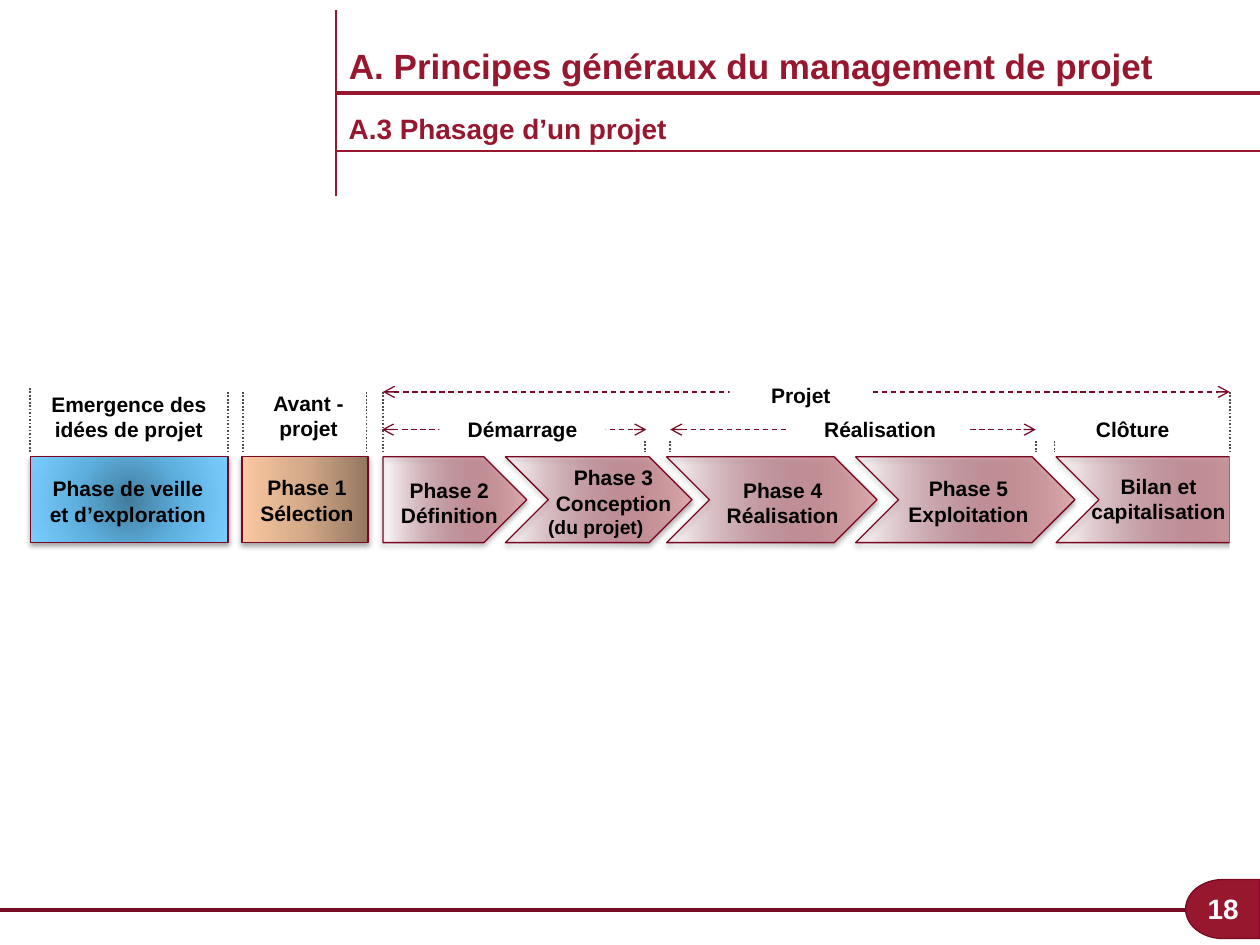
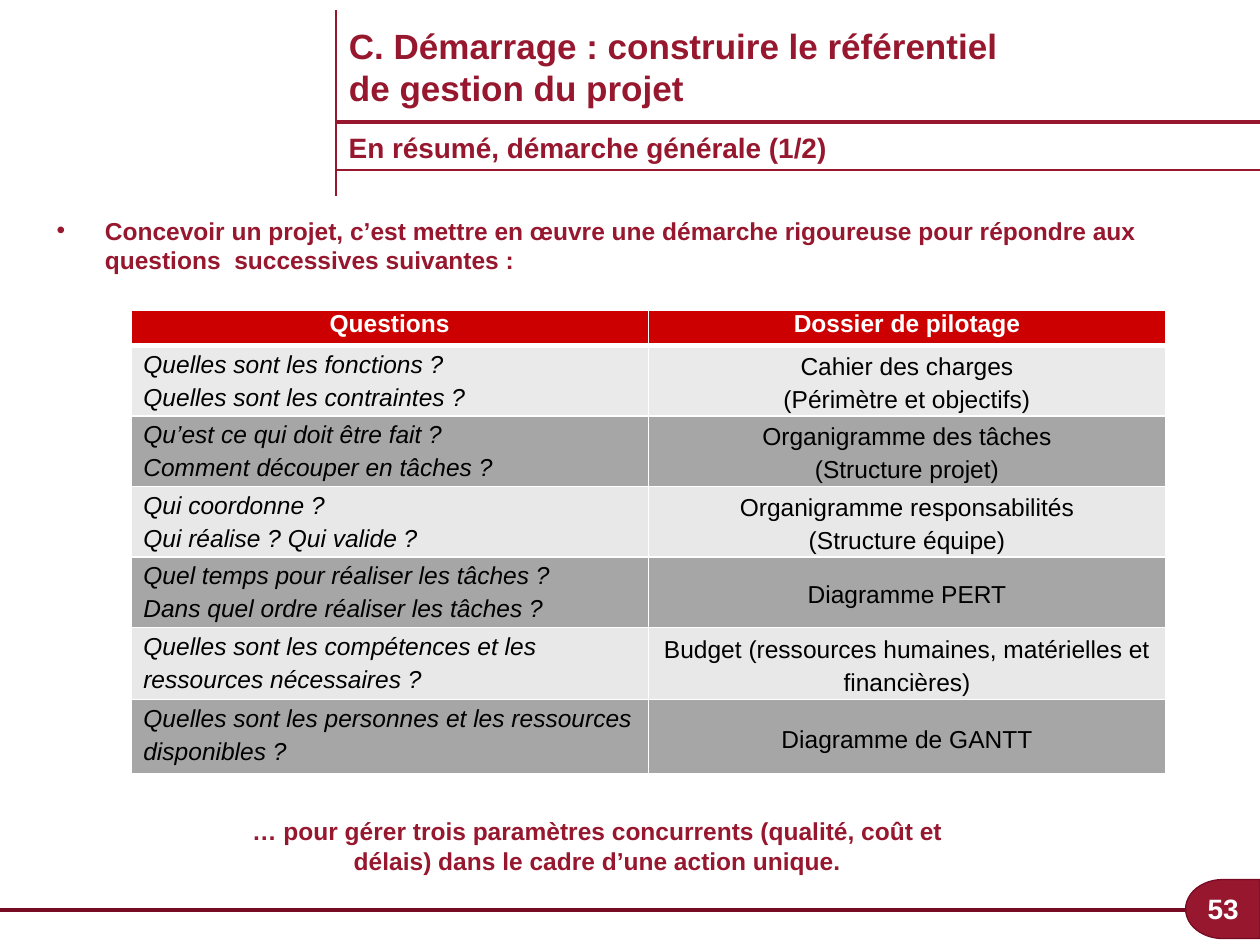
"""Build two slides on project phases and the project management file."""
import pptx
import pptx.dml.color
import pptx.enum.dml
import pptx.enum.shapes
import pptx.enum.text
import pptx.oxml
import pptx.oxml.ns
import pptx.util

Cm = pptx.util.Cm
Pt = pptx.util.Pt
Shapes = pptx.enum.shapes.MSO_SHAPE
Align = pptx.enum.text.PP_ALIGN
Anchor = pptx.enum.text.MSO_ANCHOR
Dash = pptx.enum.dml.MSO_LINE

CRIMSON, DARK, WINE = "96172E", "780B24", "780822"
BLACK, WHITE, GREY = "000000", "FFFFFF", "4D4D4D"
HEADER, LIGHT, MEDIUM = "CC0000", "E8E8E8", "A6A6A6"
LINEAR = '<a:lin ang="{}" scaled="0"/>'
CIRCLE = ('<a:path path="circle"><a:fillToRect l="50000" t="50000" '
          'r="50000" b="50000"/></a:path>')
ROSE = ([(0, "83001E", 0), (100, "DCACAE", 100)], LINEAR.format(0))
BLUE = ([(0, "427C9D", 100), (50, "5EB0DF", 100), (100, "7ACEFF", 100)], CIRCLE)
ORANGE = ([(0, "947760", 100), (50, "D3A988", 100), (100, "FAC8A1", 100)],
          LINEAR.format(10800000))
MARGIN = 6.78
SLIDE_WIDTH, SLIDE_HEIGHT = 25.4, 19.05


def color(value):
    return pptx.dml.color.RGBColor.from_string(value)


def xml(tag, content="", **attributes):
    listed = "".join(f' {name}="{value}"' for name, value in attributes.items())
    namespace = pptx.oxml.ns.nsdecls("a")
    return pptx.oxml.parse_xml(f"<a:{tag} {namespace}{listed}>{content}</a:{tag}>")


def solid(value):
    return f'<a:solidFill><a:srgbClr val="{value}"/></a:solidFill>'


class Deck:
    def __init__(self):
        self.presentation = pptx.Presentation()
        self.presentation.slide_width = Cm(SLIDE_WIDTH)
        self.presentation.slide_height = Cm(SLIDE_HEIGHT)
        self.slide = None

    def start(self, layout, number, title, title_box, rule, subtitle, subtitle_top, spacing=1.0):
        self.slide = self.presentation.slides.add_slide(
            self.presentation.slide_layouts[layout])
        self.line(0, 18.34, 23.9, 18.34, DARK, 2)
        tab = self.shape(Shapes.FLOWCHART_DELAY, 23.9, 17.73, 1.5, 1.19, CRIMSON, DARK)
        tab.rotation = 180
        self.text(number, 19.3, 17.81, 5.92, 1.02, 16, WHITE, Align.RIGHT,
                  anchor=Anchor.MIDDLE)
        self.line(MARGIN, rule, SLIDE_WIDTH, rule, CRIMSON, 2.25)
        self.placeholder(0, title, title_box, 20).line_spacing = spacing
        self.text(subtitle, MARGIN, subtitle_top, 18.31, 0.94, 16, CRIMSON, Align.LEFT)
        subtitle_rule = subtitle_top + 0.92
        self.line(MARGIN, subtitle_rule, SLIDE_WIDTH, subtitle_rule, CRIMSON, 1)
        self.line(MARGIN, 0.2, MARGIN, 3.96, CRIMSON, 1)

    def styled_run(self, paragraph, text, size, ink, bold=True, italic=False,
                   align=Align.LEFT):
        paragraph.alignment = align
        run = paragraph.add_run()
        run.text = text
        run.font.name = "Arial"
        run.font.size = Pt(size)
        run.font.bold = bold
        run.font.italic = italic
        run.font.color.rgb = color(ink)

    def placeholder(self, index, text, box, size, bullet=False):
        shape = self.slide.placeholders[index]
        shape.left, shape.top, shape.width, shape.height = map(Cm, box)
        frame = shape.text_frame
        frame.auto_size = pptx.enum.text.MSO_AUTO_SIZE.NONE
        frame.vertical_anchor = Anchor.TOP
        paragraph = frame.paragraphs[0]
        if bullet:
            properties = paragraph._p.get_or_add_pPr()
            properties.set("marL", str(Cm(0.97)))
            properties.set("indent", str(-Cm(0.97)))
            properties.append(xml("buFont", typeface="Arial"))
            properties.append(xml("buChar", char="•"))
        paragraph.space_before = Pt(0)
        self.styled_run(paragraph, text, size, CRIMSON)
        return paragraph

    def text(self, text, left, top, width, height, size=12, ink=BLACK,
             align=Align.CENTER, fill=None, anchor=Anchor.TOP, wrap=True):
        box = self.slide.shapes.add_textbox(Cm(left), Cm(top), Cm(width), Cm(height))
        if fill:
            box.fill.solid()
            box.fill.fore_color.rgb = color(fill)
        frame = box.text_frame
        frame.word_wrap = wrap
        frame.vertical_anchor = anchor
        self.styled_run(frame.paragraphs[0], text, size, ink, align=align)

    def shape(self, kind, left, top, width, height, fill, outline=None):
        shape = self.slide.shapes.add_shape(kind, Cm(left), Cm(top), Cm(width), Cm(height))
        shape.shadow.inherit = False
        shape.fill.solid()
        shape.fill.fore_color.rgb = color(fill)
        if outline:
            shape.line.color.rgb = color(outline)
            shape.line.width = Pt(0.75)
        else:
            shape.line.fill.background()
        return shape

    def phase(self, kind, left, width, gradient):
        shape = self.shape(kind, left, 9.21, width, 1.73, WHITE, WINE)
        stops, direction = gradient
        listed = "".join(
            f'<a:gs pos="{place * 1000}"><a:srgbClr val="{value}">'
            f'<a:alpha val="{opacity * 1000}"/></a:srgbClr></a:gs>'
            for place, value, opacity in stops)
        properties = shape.element.spPr
        properties.replace(properties.find(pptx.oxml.ns.qn("a:solidFill")),
                           xml("gradFill", f"<a:gsLst>{listed}</a:gsLst>{direction}"))
        properties.find(pptx.oxml.ns.qn("a:effectLst")).append(
            xml("outerShdw", '<a:srgbClr val="000000"><a:alpha val="35000"/></a:srgbClr>',
                blurRad=Pt(3.1), dist=Pt(1.8), dir=5400000, rotWithShape=0))

    def line(self, left, top, right, bottom, ink, width, dash=None, arrows=False):
        connector = self.slide.shapes.add_connector(
            pptx.enum.shapes.MSO_CONNECTOR.STRAIGHT, Cm(left), Cm(top), Cm(right), Cm(bottom))
        connector.line.color.rgb = color(ink)
        connector.line.width = Pt(width)
        if dash:
            connector.line.dash_style = dash
        properties = connector.element.spPr
        if arrows:
            outline = properties.find(pptx.oxml.ns.qn("a:ln"))
            for end in ("headEnd", "tailEnd"):
                outline.append(xml(end, type="arrow"))
        properties.append(xml("effectLst"))

    def cell(self, cell, lines, fill, ink, top, bottom, **style):
        properties = cell._tc.get_or_add_tcPr()
        for side, width in zip("LRTB", (1, 1, top, bottom)):
            properties.append(xml("ln" + side, solid(WHITE), w=Pt(width)))
        cell.fill.solid()
        cell.fill.fore_color.rgb = color(fill)
        cell.margin_left = cell.margin_right = Cm(0.25)
        cell.margin_top = cell.margin_bottom = 0
        frame = cell.text_frame
        for index, text in enumerate(lines):
            paragraph = frame.add_paragraph() if index else frame.paragraphs[0]
            if ink == BLACK:
                paragraph.line_spacing = 1.2
            self.styled_run(paragraph, text, 14, ink, **style)

    def table(self, left, top, column_width, heights, headings, rows):
        table = self.slide.shapes.add_table(
            len(heights), 2, Cm(left), Cm(top), Cm(2 * column_width), Cm(sum(heights))).table
        table.horz_banding = False
        for column in table.columns:
            column.width = Cm(column_width)
        for row, height in zip(table.rows, heights):
            row.height = Cm(height)
        for index, heading in enumerate(headings):
            self.cell(table.cell(0, index), [heading], HEADER, WHITE, 1, 3,
                      align=Align.CENTER)
        for index, (questions, documents) in enumerate(rows, 1):
            fill = MEDIUM if index % 2 == 0 else "EAEAEA" if index == 1 else LIGHT
            top_border = 3 if index == 1 else 1
            self.cell(table.cell(index, 0), questions, fill, BLACK, top_border, 1,
                      bold=False, italic=True)
            answer = table.cell(index, 1)
            self.cell(answer, documents, fill, BLACK, top_border, 1,
                      bold=False, align=Align.CENTER)
            answer.vertical_anchor = Anchor.MIDDLE


def phases_slide(deck):
    deck.start(5, "18", "A. Principes généraux du management de projet",
               (MARGIN, 0.94, 18.14, 0.94), 1.88, "A.3 Phasage d’un projet", 2.13, 0.8)

    deck.phase(Shapes.PENTAGON, 7.72, 2.9, ROSE)
    for left, width in ((10.19, 3.76), (13.44, 4.24), (17.25, 4.42), (21.29, 4.37)):
        deck.phase(Shapes.CHEVRON, left, width, ROSE)
    project_end = 24.79
    deck.line(project_end, 9.21, project_end, 10.94, DARK, 0.75)
    deck.shape(Shapes.RECTANGLE, project_end, 9.19, SLIDE_WIDTH - project_end, 1.91, WHITE)
    deck.phase(Shapes.RECTANGLE, 0.61, 3.99, BLUE)
    deck.phase(Shapes.RECTANGLE, 4.88, 2.54, ORANGE)

    for top, places in ((7.82, (0.61,)),
                        (7.9, (4.6, 4.9, 7.39, 7.72, project_end)),
                        (8.89, (13.0, 13.51, 20.88, 21.26))):
        for place in places:
            deck.line(place, top, place, 9.12, GREY, 1, Dash.ROUND_DOT)
    for left, right, level in ((7.72, project_end, 7.9), (7.7, 13.03, 8.66),
                               (13.51, 20.88, 8.66)):
        deck.line(left, level, right, level, DARK, 0.75, Dash.DASH, arrows=True)
    for name, left, top, width in (
            ("Projet", 14.71, 7.59, 2.87), ("Démarrage", 8.86, 8.28, 3.35),
            ("Réalisation", 15.93, 8.28, 3.63), ("Clôture", 21.77, 8.28, 2.13)):
        deck.text(name, left, top, width, 0.76, fill=WHITE)

    for name, left, top, width in (
            ("Emergence des idées de projet", 0.76, 7.77, 3.68),
            ("Avant - projet", 5.18, 7.75, 2.08),
            ("Phase de veille et d’exploration", 0.74, 9.47, 3.68),
            ("Phase 1 Sélection", 4.78, 9.45, 2.82),
            ("Phase 2 Définition", 7.65, 9.5, 2.82),
            ("Phase 3 Conception", 10.92, 9.25, 2.9),
            ("Phase 4 Réalisation", 14.33, 9.5, 2.9),
            ("Phase 5 Exploitation", 17.91, 9.47, 3.23),
            ("Bilan et capitalisation", 21.74, 9.42, 3.23)):
        deck.text(name, left, top, width, 1.27)
    deck.text("(du projet)", 10.8, 10.26, 2.44, 0.74, 11, align=Align.LEFT, wrap=False)


def summary_slide(deck):
    deck.start(1, "53", "C. Démarrage : construire le référentiel de gestion du projet",
               (MARGIN, 0.36, 13.67, 1.96), 2.46, "En résumé, démarche générale (1/2)", 2.51)
    deck.placeholder(
        1, "Concevoir un projet, c’est mettre en œuvre une démarche rigoureuse pour "
        "répondre aux questions  successives suivantes :", (0.89, 4.22, 23.6, 1.14), 14,
        bullet=True)
    deck.table(2.64, 6.25, 10.43, [0.71] + [1.42] * 4 + [1.45, 1.5],
               ("Questions", "Dossier de pilotage"), (
        (("Quelles sont les fonctions ?", "Quelles sont les contraintes ?"),
         ("Cahier des charges", "(Périmètre et objectifs)")),
        (("Qu’est ce qui doit être fait ?", "Comment découper en tâches ?"),
         ("Organigramme des tâches", "(Structure projet)")),
        (("Qui coordonne ?", "Qui réalise ? Qui valide ?"),
         ("Organigramme responsabilités", "(Structure équipe)")),
        (("Quel temps pour réaliser les tâches ?", "Dans quel ordre réaliser les tâches ?"),
         ("Diagramme PERT",)),
        (("Quelles sont les compétences et les ressources nécessaires ?",),
         ("Budget (ressources humaines, matérielles et financières)",)),
        (("Quelles sont les personnes et les ressources disponibles ?",),
         ("Diagramme de GANTT",))))
    deck.text("… pour gérer trois paramètres concurrents (qualité, coût et délais) "
              "dans le cadre d’une action unique.", 4.78, 16.33, 14.53, 1.14, 14, CRIMSON)


def main():
    deck = Deck()
    phases_slide(deck)
    summary_slide(deck)
    deck.presentation.save("out.pptx")


if __name__ == "__main__":
    main()
